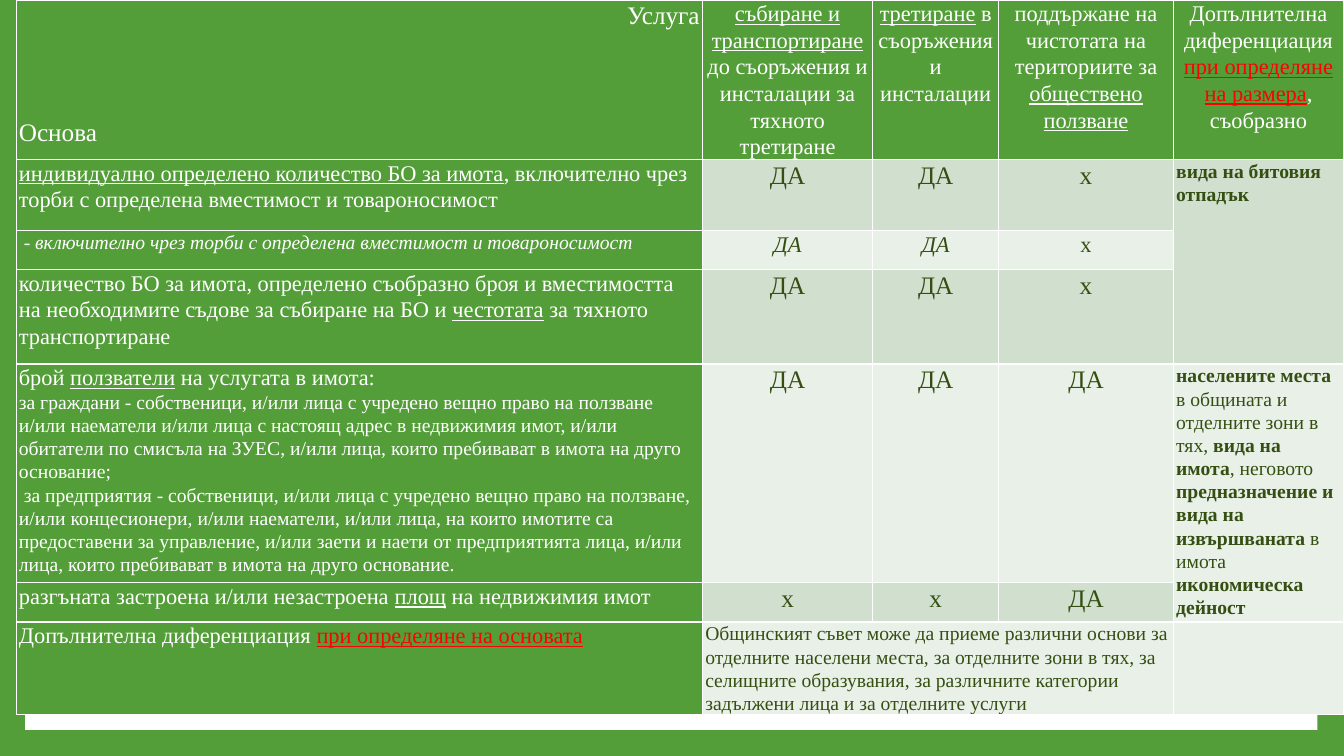
from dataclasses import dataclass

from pptx import Presentation
from pptx.dml.color import RGBColor
from pptx.enum import shapes, text
from pptx.oxml.ns import qn
from pptx.util import Pt
from lxml import etree

GREEN = RGBColor(0x54, 0x9E, 0x39)
WHITE = RGBColor(0xFF, 0xFF, 0xFF)
RED = RGBColor(0xFF, 0x00, 0x00)
DARK = RGBColor(0x35, 0x4F, 0x12)
MID = RGBColor(0xD1, 0xDF, 0xCE)
PALE = RGBColor(0xE9, 0xF0, 0xE8)
FONT = "Times New Roman"
LEFT, CENTER, RIGHT = text.PP_ALIGN.LEFT, text.PP_ALIGN.CENTER, text.PP_ALIGN.RIGHT

COLUMN_WIDTHS = [490.3, 121.6, 90, 124.8, 121.6]
ROW_HEIGHTS = [113.5, 50.6, 28, 67.4, 156.4, 28, 66]


@dataclass
class Span:
    text: str
    underline: bool = False
    bold: bool = False
    italic: bool = False
    color: RGBColor | None = None


@dataclass
class Para:
    spans: list[Span]
    size: float = 16
    align: text.PP_ALIGN = LEFT
    before: float = 0


@dataclass
class Entry:
    paras: list[Para]
    fill: RGBColor = GREEN
    color: RGBColor = WHITE
    rows: int = 1
    columns: int = 1


def heading(*spans: Span) -> Entry:
    return Entry([Para(list(spans), align=CENTER)])


def basis(*spans: Span) -> Entry:
    return Entry([Para(list(spans))])


def answers(words: str, fill: RGBColor, size: float = 18, italic: bool = False) -> list[Entry]:
    """One centred entry per word; only the word ДА takes the italic."""
    return [
        Entry([Para([Span(word, italic=italic and word == "ДА")], size, CENTER)], fill, DARK)
        for word in words.split()
    ]


HEADER = [
    Entry([Para([Span("Услуга")], 18, RIGHT), Para([Span("Основа")], 18, before=62)]),
    heading(Span("събиране и транспортиране ", underline=True),
            Span("до съоръжения и инсталации за тяхното третиране")),
    heading(Span("третиране", underline=True), Span(" в съоръжения и инсталации")),
    heading(Span("поддържане на чистотата на териториите за "),
            Span("обществено ползване", underline=True)),
    heading(Span("Допълнителна диференциация "),
            Span("при определяне на размера", underline=True, color=RED),
            Span(", съобразно")),
]

WASTE_KIND = Entry([Para([Span("вида на битовия отпадък", bold=True)], 14)], MID, DARK, rows=3)

PLACES = Entry([Para([
    Span("населените места ", bold=True),
    Span("в общината и отделните зони в тях, "),
    Span("вида на имота", bold=True),
    Span(", неговото "),
    Span("предназначение и вида на извършваната ", bold=True),
    Span("в имота "),
    Span("икономическа дейност", bold=True),
], 14)], PALE, DARK, rows=2)

USERS = Entry([
    Para([Span("брой "), Span("ползватели", underline=True), Span(" на услугата в имота:")]),
    Para([Span("за граждани - собственици, и/или лица с учредено вещно право на ползване "
               "и/или наематели и/или лица с настоящ адрес в недвижимия имот, и/или "
               "обитатели по смисъла на ЗУЕС, и/или лица, които пребивават в имота на "
               "друго основание;")], 14),
    Para([Span(" за предприятия - собственици, и/или лица с учредено вещно право на "
               "ползване, и/или концесионери, и/или наематели, и/или лица, на които "
               "имотите са предоставени за управление, и/или заети и наети от "
               "предприятията лица, и/или лица, които пребивават в имота на друго "
               "основание.")], 14),
])

COUNCIL = Entry([Para([Span(
    "Общинският съвет може да приеме различни основи за отделните населени места, "
    "за отделните зони в тях, за селищните образувания, за различните категории "
    "задължени лица и за отделните услуги")], 14)], PALE, DARK, columns=3)

ROWS: list[list[Entry | None]] = [
    HEADER,
    [basis(Span("индивидуално определено количество БО за имота", underline=True),
           Span(", включително чрез торби с определена вместимост и товароносимост")),
     *answers("ДА ДА х", MID), WASTE_KIND],
    [Entry([Para([Span(" - включително чрез торби с определена вместимост и "
                       "товароносимост", italic=True)], 14)]),
     *answers("ДА ДА х", PALE, 16, italic=True), None],
    [basis(Span("количество БО за имота, определено съобразно броя и вместимостта на "
                "необходимите съдове за събиране на БО и "),
           Span("честотата", underline=True), Span(" за тяхното транспортиране")),
     *answers("ДА ДА х", MID), None],
    [USERS, *answers("ДА ДА ДА", PALE), PLACES],
    [basis(Span("разгъната застроена и/или незастроена "), Span("площ", underline=True),
           Span(" на недвижимия имот")),
     *answers("х х ДА", MID), None],
    [basis(Span("Допълнителна диференциация "),
           Span("при определяне на основата", underline=True, color=RED)),
     COUNCIL, None, None, Entry([], PALE)],
]


def set_borders(cell) -> None:
    properties = cell._tc.get_or_add_tcPr()
    for side in ("a:lnL", "a:lnR", "a:lnT", "a:lnB"):
        line = etree.SubElement(properties, qn(side), w=str(Pt(1)))
        fill = etree.SubElement(line, qn("a:solidFill"))
        etree.SubElement(fill, qn("a:srgbClr"), val=str(WHITE))


def write_entry(cell, entry: Entry) -> None:
    cell.fill.solid()
    cell.fill.fore_color.rgb = entry.fill
    frame = cell.text_frame
    for index, content in enumerate(entry.paras):
        para = frame.add_paragraph() if index else frame.paragraphs[0]
        para.alignment = content.align
        para.line_spacing = 1.07
        para.space_before = Pt(content.before)
        for span in content.spans:
            run = para.add_run()
            run.text = span.text
            font = run.font
            font.name = FONT
            font.size = Pt(content.size)
            font.bold, font.italic, font.underline = span.bold, span.italic, span.underline
            font.color.rgb = span.color or entry.color


def add_fee_table(page) -> None:
    frame = page.shapes.add_table(
        len(ROW_HEIGHTS), len(COLUMN_WIDTHS), Pt(11.5), Pt(0),
        Pt(sum(COLUMN_WIDTHS)), Pt(sum(ROW_HEIGHTS)))
    table = frame.table
    table.first_row = table.horz_banding = False
    for column, width in zip(table.columns, COLUMN_WIDTHS):
        column.width = Pt(width)
    for row, height in zip(table.rows, ROW_HEIGHTS):
        row.height = Pt(height)
    for cell in table.iter_cells():
        cell.margin_left = cell.margin_right = Pt(2)
        cell.margin_top = cell.margin_bottom = Pt(0)
        set_borders(cell)
    for r, entries in enumerate(ROWS):
        for c, entry in enumerate(entries):
            if entry is None:
                continue
            cell = table.cell(r, c)
            if entry.rows > 1 or entry.columns > 1:
                cell.merge(table.cell(r + entry.rows - 1, c + entry.columns - 1))
            write_entry(cell, entry)


def main() -> None:
    deck = Presentation()
    deck.slide_width, deck.slide_height = Pt(960), Pt(540)
    page = deck.slides.add_slide(deck.slide_layouts[6])
    page.background.fill.solid()
    page.background.fill.fore_color.rgb = GREEN
    panel = page.shapes.add_shape(
        shapes.MSO_SHAPE.RECTANGLE, Pt(18), Pt(19.4), Pt(923), Pt(502))
    panel.shadow.inherit = False
    panel.fill.solid()
    panel.fill.fore_color.rgb = WHITE
    panel.line.fill.background()
    add_fee_table(page)
    deck.save("out.pptx")


if __name__ == "__main__":
    main()
